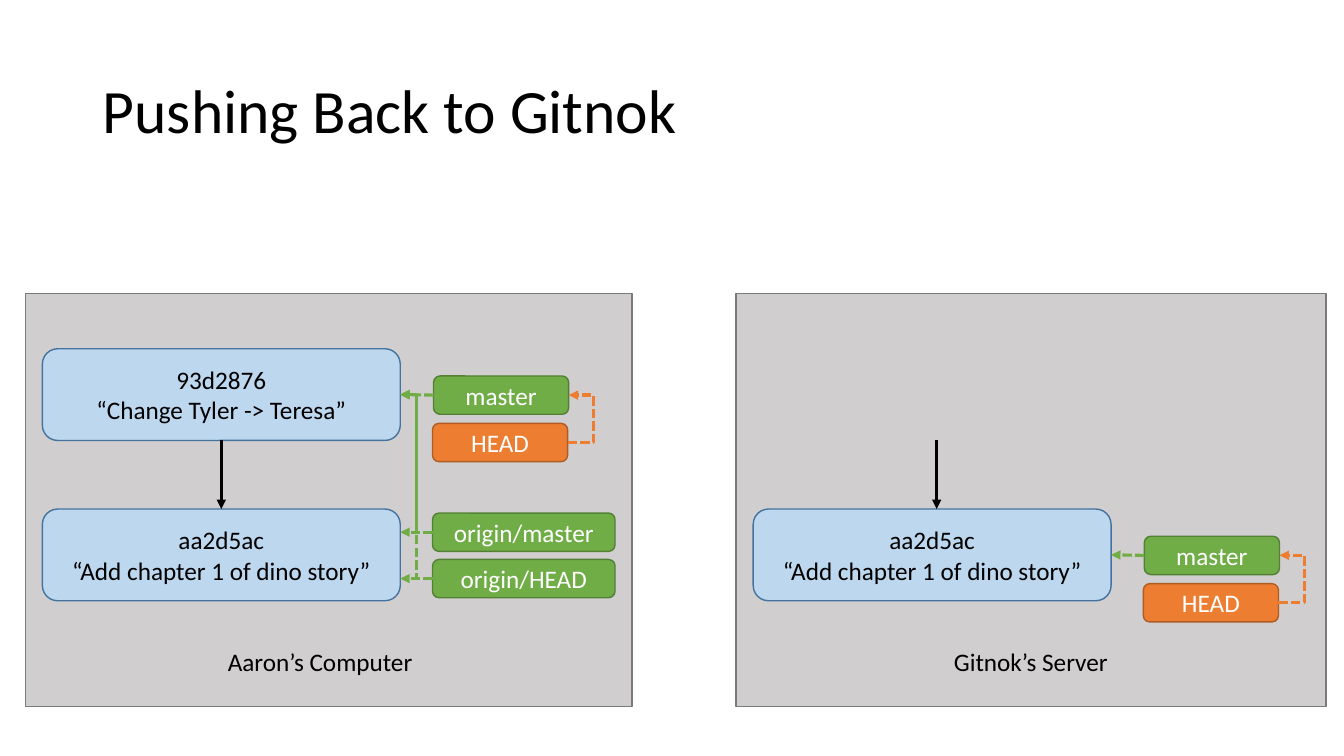
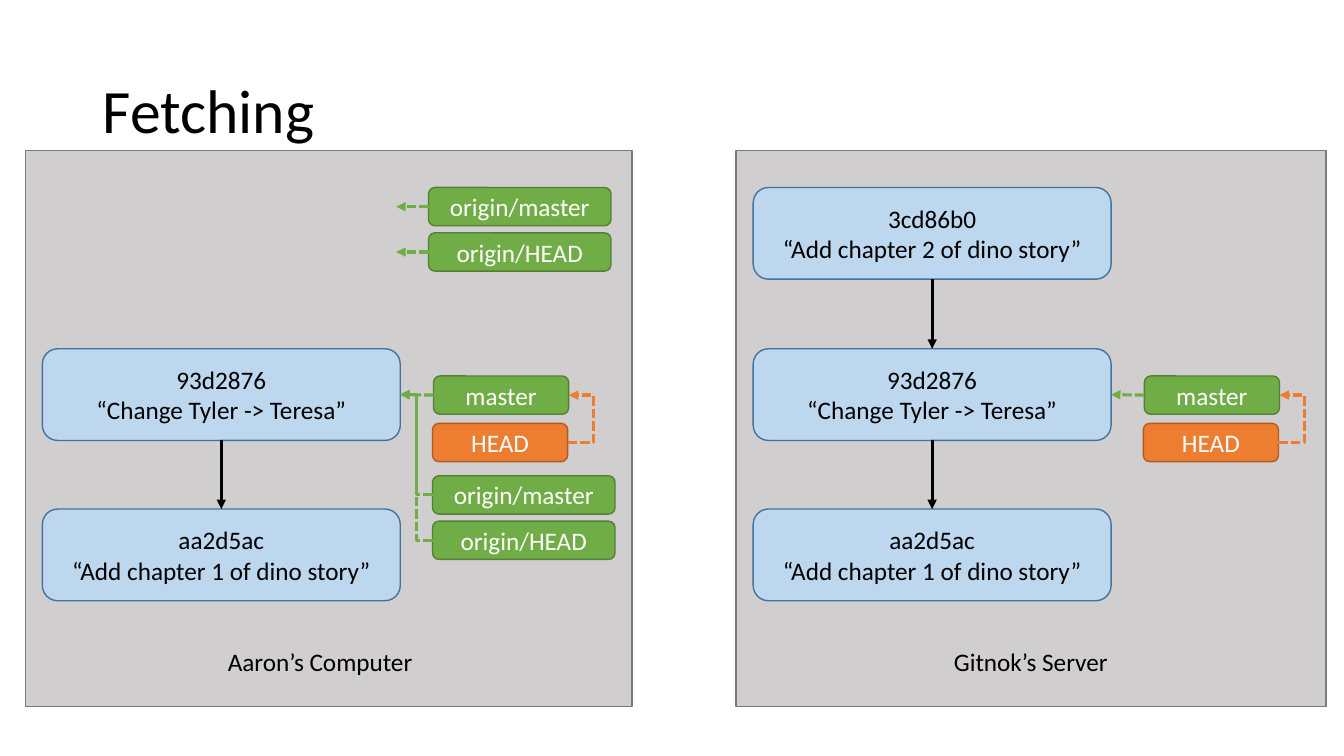
from lxml.etree import SubElement
from pptx import Presentation
from pptx.dml.color import RGBColor
from pptx.enum.dml import MSO_LINE
from pptx.enum.shapes import MSO_CONNECTOR as CONN, MSO_SHAPE as SHAPE
from pptx.enum.text import MSO_ANCHOR as ANCHOR, MSO_AUTO_SIZE as AUTO, PP_ALIGN as ALIGN
from pptx.oxml.ns import qn
from pptx.util import Inches, Pt

COLORS = {
    "text": "000000", "light": "FFFFFF",
    "panel": "D0CECE", "panel_line": "7A7A7A",
    "commit": "BDD7EE", "commit_line": "43739E",
    "branch": "70AD47", "branch_line": "538035",
    "head": "ED7D31", "head_line": "AF5C24",
}
FONT = "Calibri"
TOP, RIGHT, BOTTOM, LEFT = 0, 3, 2, 1

# Horizontal places of the two computers, and the rows of commits
LOCAL_X, SERVER_X = 0.25, 7.3
COMMIT_DX, TAG_DX = 0.17, 4.05
ROW_1, ROW_2, ROW_3 = 5.05, 3.46, 1.86
PANEL_BOTTOM = 7.01

COMMIT_1 = "aa2d5ac\n“Add chapter 1 of dino story”"
COMMIT_2 = "93d2876\n“Change Tyler -> Teresa”"
COMMIT_3 = "3cd86b0\n“Add chapter 2 of dino story”"


def rgb(name):
    return RGBColor.from_string(COLORS[name])


class Deck:
    """Holds the style and the current slide."""

    def __init__(self):
        self.prs = Presentation()
        self.prs.slide_width, self.prs.slide_height = Inches(13.33), Inches(7.5)
        self.s = None

    def set_text(self, sp, text, size=18, color="text", align=ALIGN.CENTER, spacing=None):
        tf = sp.text_frame
        tf.text = text
        tf.word_wrap = True
        for p in tf.paragraphs:
            p.alignment = align
            p.line_spacing = spacing
            for r in p.runs:
                r.font.name, r.font.size = FONT, Pt(size)
                r.font.color.rgb = rgb(color)
        return tf

    def slide(self, title):
        self.s = self.prs.slides.add_slide(self.prs.slide_layouts[5])
        sp = self.s.shapes.title
        sp.left, sp.top = Inches(0.92), Inches(0.4)
        sp.width, sp.height = Inches(11.5), Inches(1.45)
        tf = self.set_text(sp, title, 44, align=ALIGN.LEFT, spacing=0.9)
        tf.vertical_anchor = ANCHOR.MIDDLE
        tf.auto_size = AUTO.NONE

    def box(self, shape, x, y, w, h, style, text="", color="text"):
        sp = self.s.shapes.add_shape(shape, Inches(x), Inches(y), Inches(w), Inches(h))
        sp.shadow.inherit = False
        sp.fill.solid()
        sp.fill.fore_color.rgb = rgb(style)
        sp.line.color.rgb = rgb(style + "_line")
        sp.line.width = Pt(1)
        if text:
            self.set_text(sp, text, color=color).vertical_anchor = ANCHOR.MIDDLE
        return sp

    def panel(self, x, y, w, caption):
        self.box(SHAPE.RECTANGLE, x, y, w, PANEL_BOTTOM - y, "panel")
        sp = self.s.shapes.add_textbox(Inches(x), Inches(6.36), Inches(5.85), Inches(0.4))
        self.set_text(sp, caption)

    def commit(self, panel_x, y, text):
        return self.box(SHAPE.ROUNDED_RECTANGLE, panel_x + COMMIT_DX, y, 3.55, 0.91,
                        "commit", text)

    def tag(self, x, y, text, w=1.81, style="branch"):
        return self.box(SHAPE.ROUNDED_RECTANGLE, x, y, w, 0.38, style, text, "light")

    def link(self, begin, end, color, kind=CONN.STRAIGHT, dashed=True, reach=None):
        """Arrow between two ends, each a (shape, side) or an (x, y) pair."""
        c = self.s.shapes.add_connector(kind, 0, 0, 0, 0)
        if isinstance(begin[0], int):
            c.begin_x, c.begin_y = begin
        else:
            c.begin_connect(*begin)
        if isinstance(end[0], int):
            c.end_x, c.end_y = end
        else:
            c.end_connect(*end)
        c.line.color.rgb = rgb(color)
        c.line.width = Pt(2.25)
        if dashed:
            c.line.dash_style = MSO_LINE.SQUARE_DOT
        # Arrowhead, no shadow, and how far an elbow bulges out
        sp_pr = c.element.spPr
        SubElement(sp_pr.find(qn("a:ln")), qn("a:tailEnd"), type="triangle")
        SubElement(sp_pr, qn("a:effectLst"))
        if reach:
            guides = sp_pr.find(qn("a:prstGeom")).get_or_add_avLst()
            share = round(reach / c.width * 100000)
            SubElement(guides, qn("a:gd"), name="adj1", fmla=f"val {share}")

    def parent(self, child, older):
        self.link((child, BOTTOM), (older, TOP), "text", dashed=False)

    def branch(self, panel_x, y, commit):
        """The master tag on a commit, with HEAD below pointing at it."""
        x = panel_x + TAG_DX
        master = self.tag(x, y, "master", 1.34)
        head = self.tag(x - 0.01, y + 0.47, "HEAD", 1.34, "head")
        self.link((master, LEFT), (commit, RIGHT), "branch")
        self.link((head, RIGHT), (master, RIGHT), "head", CONN.ELBOW, reach=Inches(0.26))

    def origin(self, x, y, step):
        return [self.tag(x, y + i * step, text)
                for i, text in enumerate(("origin/master", "origin/HEAD"))]

    def stub(self, tag):
        """Short arrow leaving a tag straight to the left."""
        end = (tag.left - Inches(0.32), tag.top + tag.height // 2)
        self.link((tag, LEFT), end, "branch")

    def track(self, tag, commit):
        self.link((tag, LEFT), (commit, RIGHT), "branch", CONN.ELBOW)

    def computers(self, title, top):
        """Title, both panels, the local history and the server's first commit."""
        self.slide(title)
        self.panel(LOCAL_X, top, 6.02, "Aaron’s Computer")
        self.panel(SERVER_X, top, 5.85, "Gitnok’s Server")
        first = self.commit(LOCAL_X, ROW_1, COMMIT_1)
        second = self.commit(LOCAL_X, ROW_2, COMMIT_2)
        self.parent(second, first)
        self.branch(LOCAL_X, 3.73, second)
        return second, self.commit(SERVER_X, ROW_1, COMMIT_1)


def pushing(deck):
    local, server = deck.computers("Pushing Back to Gitnok", 2.91)
    deck.branch(SERVER_X, 5.32, server)
    # Remote tags before and after the push
    for tag in deck.origin(4.29, 5.09, 0.46):
        deck.stub(tag)
        deck.track(tag, local)
    # Arrow of the commit about to arrive
    x = Inches(9.29)
    deck.link((x, Inches(4.37)), (x, Inches(ROW_1)), "text", dashed=False)


def fetching(deck):
    local, first = deck.computers("Fetching", 1.49)
    # Server history
    second = deck.commit(SERVER_X, ROW_2, COMMIT_2)
    third = deck.commit(SERVER_X, ROW_3, COMMIT_3)
    deck.parent(second, first)
    deck.parent(third, second)
    deck.branch(SERVER_X, 3.73, second)
    # Remote tags before and after the fetch
    for tag in deck.origin(4.29, 4.72, 0.45):
        deck.track(tag, local)
    for tag in deck.origin(4.25, 1.86, 0.45):
        deck.stub(tag)


def main():
    deck = Deck()
    pushing(deck)
    fetching(deck)
    deck.prs.save("out.pptx")


if __name__ == "__main__":
    main()
